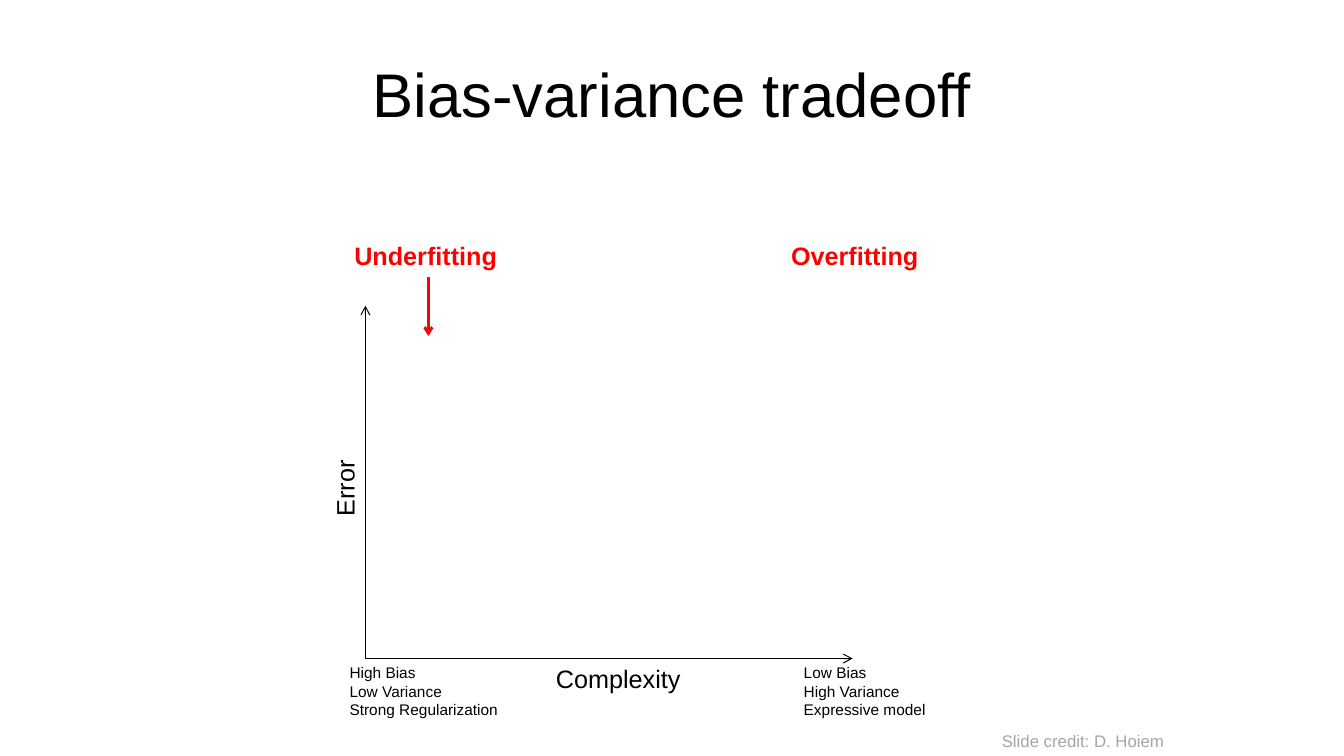
import pptx
import pptx.dml.color
import pptx.enum.shapes
import pptx.enum.text
import pptx.oxml
import pptx.oxml.ns
import pptx.util
from dataclasses import dataclass

Pt = pptx.util.Pt


@dataclass(frozen=True)
class Theme:
    font: str = "Arial"
    ink: str = "000000"
    accent: str = "FF0000"
    muted: str = "A6A6A6"
    title: float = 44
    label: float = 18
    credit: float = 12
    note: float = 11


class SlideBuilder:
    def __init__(self, slide, theme):
        self.slide = slide
        self.theme = theme

    def style(self, paragraph, size, color, bold=False):
        for run in paragraph.runs:
            run.font.name = self.theme.font
            run.font.size = Pt(size)
            run.font.bold = bold
            run.font.color.rgb = pptx.dml.color.RGBColor.from_string(color)

    def title(self, text, left, top, width, height):
        heading = self.slide.shapes.title
        heading.left, heading.top = Pt(left), Pt(top)
        heading.width, heading.height = Pt(width), Pt(height)
        frame = heading.text_frame
        frame.text = text
        frame.vertical_anchor = pptx.enum.text.MSO_ANCHOR.MIDDLE
        frame.paragraphs[0].alignment = pptx.enum.text.PP_ALIGN.CENTER
        self.style(frame.paragraphs[0], self.theme.title, self.theme.ink)

    def text(self, text, left, top, width, height, size, color, bold=False, rotation=0):
        box = self.slide.shapes.add_textbox(Pt(left), Pt(top), Pt(width), Pt(height))
        box.rotation = rotation
        frame = box.text_frame
        frame.word_wrap = False
        frame.auto_size = pptx.enum.text.MSO_AUTO_SIZE.SHAPE_TO_FIT_TEXT
        frame.text = text
        for paragraph in frame.paragraphs:
            self.style(paragraph, size, color, bold)

    def arrow(self, start, end, color, weight):
        line = self.slide.shapes.add_connector(
            pptx.enum.shapes.MSO_CONNECTOR.STRAIGHT,
            Pt(start[0]), Pt(start[1]), Pt(end[0]), Pt(end[1]))
        line.line.color.rgb = pptx.dml.color.RGBColor.from_string(color)
        line.line.width = Pt(weight)
        properties = line.line._get_or_add_ln()
        head = pptx.oxml.parse_xml(
            f'<a:tailEnd {pptx.oxml.ns.nsdecls("a")} type="arrow"/>')
        properties.append(head)
        effects = pptx.oxml.parse_xml(f'<a:effectLst {pptx.oxml.ns.nsdecls("a")}/>')
        properties.addnext(effects)


def main():
    deck = pptx.Presentation()
    deck.slide_width, deck.slide_height = Pt(960), Pt(540)
    theme = Theme()
    page = SlideBuilder(deck.slides.add_slide(deck.slide_layouts[5]), theme)

    page.title("Bias-variance tradeoff", 48, 21.6, 864, 90)

    # Fitting regimes
    for regime, left, width in (("Underfitting", 246, 117.6), ("Overfitting", 558, 106.6)):
        page.text(regime, left, 168, width, 29, theme.label, theme.accent, bold=True)
    page.arrow((306, 198), (306, 240), theme.accent, 2)

    # Axes share one origin
    origin = (261, 470.4)
    page.arrow(origin, (261, 218.4), theme.ink, 0.75)
    page.arrow(origin, (609, 470.4), theme.ink, 0.75)
    page.text("Complexity", 390, origin[1], 104.4, 29, theme.label, theme.ink)
    page.text("Error", 218.9, 334, 54.7, 29, theme.label, theme.ink, rotation=270)

    # Notes at both ends of the complexity axis
    for note, left, width in (
            ("High Bias\nLow Variance\nStrong Regularization", 242.6, 121.7),
            ("Low Bias\nHigh Variance\nExpressive model", 567, 102.2)):
        page.text(note, left, origin[1], width, 47.5, theme.note, theme.ink)

    # Credit
    page.text("Slide credit: D. Hoiem", 708.5, 518.4, 131, 21.6, theme.credit, theme.muted)

    deck.save("out.pptx")


if __name__ == "__main__":
    main()
